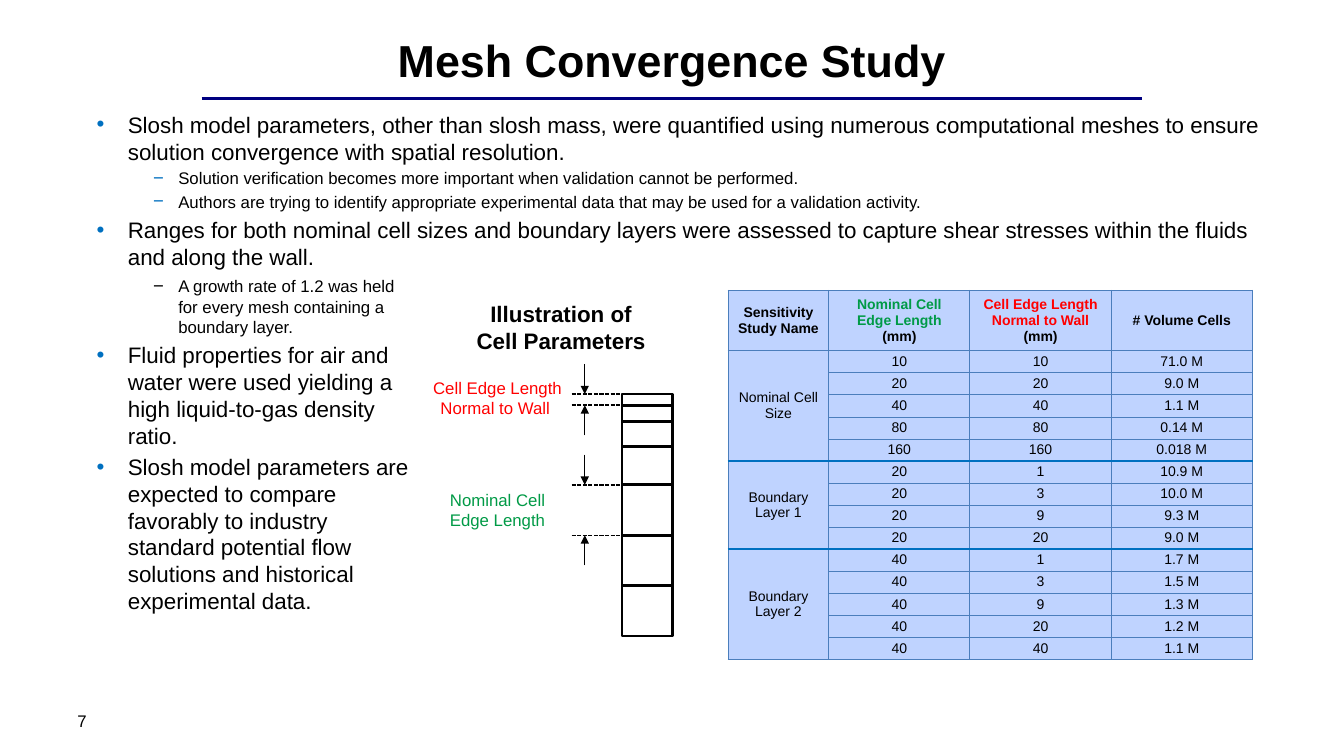
from itertools import accumulate

from lxml.etree import SubElement
from pptx import Presentation
from pptx.dml.color import RGBColor
from pptx.enum.dml import MSO_LINE
from pptx.enum.shapes import MSO_CONNECTOR as CONNECTOR, MSO_SHAPE as SHAPE
from pptx.enum.text import MSO_ANCHOR as ANCHOR, PP_ALIGN as ALIGN
from pptx.oxml.ns import qn
from pptx.util import Inches, Pt

BLACK, NAVY, BLUE, GRID = "000000", "000080", "0070C0", "4B7EBC"
GREEN, RED, CELL_FILL = "009A46", "FF0000", "BFD3FF"


def color(value):
    return RGBColor.from_string(value)


class SlideBuilder:
    font_name = "Arial"

    def __init__(self, slide):
        self.slide = slide

    def style(self, font, size, value=BLACK, bold=False):
        font.name, font.size, font.bold = self.font_name, Pt(size), bold
        font.color.rgb = color(value)

    def text_frame(self, left, top, width, height, anchor=ANCHOR.TOP):
        box = self.slide.shapes.add_textbox(
            Inches(left), Inches(top), Inches(width), Inches(height))
        frame = box.text_frame
        frame.word_wrap = True
        frame.vertical_anchor = anchor
        return frame

    def text(self, text, bounds, size, value=BLACK, bold=False,
             align=ALIGN.CENTER, anchor=ANCHOR.TOP):
        frame = self.text_frame(*bounds, anchor)
        frame.text = text
        paragraph = frame.paragraphs[0]
        paragraph.alignment = align
        self.style(paragraph.runs[0].font, size, value, bold)

    def bullets(self, items, bounds, dash_color):
        frame = self.text_frame(*bounds)
        for index, (level, text) in enumerate(items):
            paragraph = frame.add_paragraph() if index else frame.paragraphs[0]
            paragraph.text = text
            size, margin, indent, mark, mark_color = (
                (16, 0.5, -0.31, "•", BLUE) if level == 1
                else (12, 1, -0.25, "−", dash_color))
            properties = paragraph._p.get_or_add_pPr()
            properties.set("marL", str(Inches(margin)))
            properties.set("indent", str(Inches(indent)))
            bullet_color = SubElement(properties, qn("a:buClr"))
            SubElement(bullet_color, qn("a:srgbClr"), val=mark_color)
            if level == 2:
                SubElement(properties, qn("a:buSzPct"), val="110000")
            SubElement(properties, qn("a:buFont"), typeface=self.font_name)
            SubElement(properties, qn("a:buChar"), char=mark)
            if index:
                paragraph.space_before = Pt(size * 0.2)
            self.style(paragraph.runs[0].font, size)

    def line(self, x1, y1, x2, y2, width, value=BLACK, dashed=False, arrow=False):
        connector = self.slide.shapes.add_connector(
            CONNECTOR.STRAIGHT, Inches(x1), Inches(y1), Inches(x2), Inches(y2))
        connector.line.width = Pt(width)
        connector.line.color.rgb = color(value)
        if dashed:
            connector.line.dash_style = MSO_LINE.SQUARE_DOT
        if arrow:
            SubElement(connector.line._get_or_add_ln(), qn("a:tailEnd"), type="triangle")
        SubElement(connector._element.spPr, qn("a:effectLst"))

    def rectangle(self, left, top, width, height, line_width):
        shape = self.slide.shapes.add_shape(
            SHAPE.RECTANGLE, Inches(left), Inches(top), Inches(width), Inches(height))
        shape.shadow.inherit = False
        shape.fill.background()
        shape.line.color.rgb = color(BLACK)
        shape.line.width = Pt(line_width)

    def table(self, left, top, widths, heights):
        table = self.slide.shapes.add_table(
            len(heights), len(widths), Inches(left), Inches(top),
            Inches(sum(widths)), Inches(sum(heights))).table
        table.first_row = table.horz_banding = False
        for column, width in zip(table.columns, widths):
            column.width = Inches(width)
        for row, height in zip(table.rows, heights):
            row.height = Inches(height)
        return table

    def cell(self, cell, parts, bold=False, tight=False, thick_sides=()):
        paragraph = cell.text_frame.paragraphs[0]
        paragraph.alignment = ALIGN.CENTER
        for text, value in parts:
            run = paragraph.add_run()
            run.text = text
            self.style(run.font, 10, value, bold)
        cell.vertical_anchor = ANCHOR.MIDDLE
        if tight:
            cell.margin_left = cell.margin_right = Inches(0.07)
            cell.margin_top = cell.margin_bottom = 0
        properties = cell._tc.get_or_add_tcPr()
        for side in "LRTB":
            thick = side in thick_sides
            border = SubElement(properties, qn(f"a:ln{side}"),
                                w=str(Pt(1.5 if thick else 0.75)))
            fill = SubElement(border, qn("a:solidFill"))
            SubElement(fill, qn("a:srgbClr"), val=BLUE if thick else GRID)
        cell.fill.solid()
        cell.fill.fore_color.rgb = color(CELL_FILL)


HEADERS = [
    [("Sensitivity Study Name", BLACK)],
    [("Nominal Cell Edge Length ", GREEN), ("(mm)", BLACK)],
    [("Cell Edge Length Normal to Wall ", RED), ("(mm)", BLACK)],
    [("# Volume Cells", BLACK)],
]
STUDIES = [
    ("Nominal Cell Size", [
        ("10", "10", "71.0 M"), ("20", "20", "9.0 M"), ("40", "40", "1.1 M"),
        ("80", "80", "0.14 M"), ("160", "160", "0.018 M")]),
    ("Boundary Layer 1", [
        ("20", "1", "10.9 M"), ("20", "3", "10.0 M"), ("20", "9", "9.3 M"),
        ("20", "20", "9.0 M")]),
    ("Boundary Layer 2", [
        ("40", "1", "1.7 M"), ("40", "3", "1.5 M"), ("40", "9", "1.3 M"),
        ("40", "20", "1.2 M"), ("40", "40", "1.1 M")]),
]
BODY = [
    (1, "Slosh model parameters, other than slosh mass, were quantified using numerous "
        "computational meshes to ensure solution convergence with spatial resolution."),
    (2, "Solution verification becomes more important when validation cannot be performed."),
    (2, "Authors are trying to identify appropriate experimental data that may be used "
        "for a validation activity."),
    (1, "Ranges for both nominal cell sizes and boundary layers were assessed to capture "
        "shear stresses within the fluids and along the wall."),
]
SIDE_BODY = [
    (2, "A growth rate of 1.2 was held for every mesh containing a boundary layer."),
    (1, "Fluid properties for air and water were used yielding a high liquid-to-gas "
        "density ratio."),
    (1, "Slosh model parameters are expected to compare favorably to industry standard "
        "potential flow solutions and historical experimental data."),
]


def add_study_table(builder):
    row_count = sum(len(rows) for _, rows in STUDIES)
    table = builder.table(7.22, 2.88, [1, 1.4, 1.4, 1.4],
                          [0.57] + [3.06 / row_count] * row_count)
    for column, parts in enumerate(HEADERS):
        builder.cell(table.cell(0, column), parts, bold=True)
    first = 1
    for name, rows in STUDIES:
        last = first + len(rows) - 1
        top = "T" if first > 1 else ""
        bottom = "B" if last < row_count else ""
        table.cell(first, 0).merge(table.cell(last, 0))
        builder.cell(table.cell(first, 0), [(name, BLACK)], thick_sides=top + bottom)
        for row, values in enumerate(rows, first):
            sides = (top if row == first else "") + (bottom if row == last else "")
            for column, value in enumerate(values, 1):
                builder.cell(table.cell(row, column), [(value, BLACK)],
                             tight=True, thick_sides=sides)
        first = last + 1


def add_cell_illustration(builder):
    left, top, width = 6.17, 3.91, 0.5
    cell_heights = [0.11, 0.16, 0.25, 0.38, 0.5, 0.5, 0.5]
    edges = list(accumulate(cell_heights, initial=top))
    builder.rectangle(left, top, width, sum(cell_heights), 2)
    for edge in edges[1:-1]:
        builder.line(left, edge, left + width, edge, 2)
    # Dimension marks around the wall cell and a nominal cell
    for upper, lower in (edges[0:2], edges[4:6]):
        for edge, offset in ((upper, -0.3), (lower, 0.3)):
            builder.line(left - 0.5, edge, left, edge, 1, dashed=True)
            builder.line(5.8, edge + offset, 5.8, edge, 1, arrow=True)
    builder.text("Illustration of Cell Parameters", (4.58, 2.93, 1.97, 0.64), 16, bold=True)
    builder.text("Cell Edge Length Normal to Wall ", (4.16, 3.7, 1.55, 0.5), 12, RED)
    builder.text("Nominal Cell Edge Length", (4.16, 4.81, 1.55, 0.5), 12, GREEN)


def main():
    presentation = Presentation()
    presentation.slide_width, presentation.slide_height = Inches(13.33), Inches(7.5)
    builder = SlideBuilder(presentation.slides.add_slide(presentation.slide_layouts[6]))

    # Title, rule and page number
    builder.line(2, 0.98, 11.33, 0.98, 2.25, NAVY)
    builder.text("Mesh Convergence Study", (2, 0.16, 9.33, 0.87), 32, bold=True,
                 anchor=ANCHOR.MIDDLE)
    builder.text("7", (0.67, 6.95, 1.33, 0.4), 12, align=ALIGN.LEFT, anchor=ANCHOR.MIDDLE)

    # Bulleted text
    builder.bullets(BODY, (0.67, 1.05, 12, 1.63), BLUE)
    builder.bullets(SIDE_BODY, (0.67, 2.69, 3.56, 3.87), BLACK)

    # Illustration and results
    add_cell_illustration(builder)
    add_study_table(builder)
    presentation.save("out.pptx")


if __name__ == "__main__":
    main()
